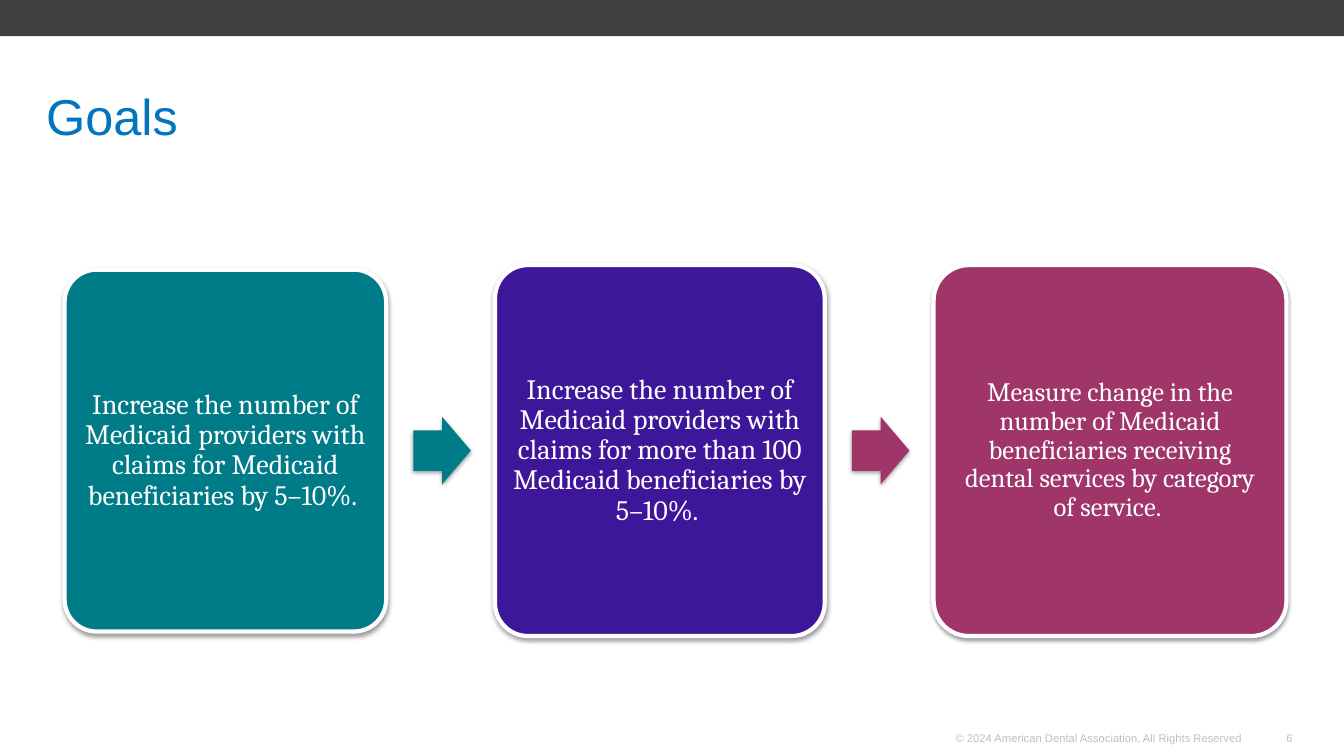
from dataclasses import dataclass

from lxml import etree
from pptx import Presentation
from pptx.dml.color import RGBColor
from pptx.enum.shapes import MSO_SHAPE
from pptx.enum.text import MSO_ANCHOR, PP_ALIGN
from pptx.oxml import parse_xml
from pptx.util import Inches, Pt

RECT, ROUND, ARROW = MSO_SHAPE.RECTANGLE, MSO_SHAPE.ROUNDED_RECTANGLE, MSO_SHAPE.RIGHT_ARROW
LEFT, CENTER, RIGHT = PP_ALIGN.LEFT, PP_ALIGN.CENTER, PP_ALIGN.RIGHT
TOP, MIDDLE = MSO_ANCHOR.TOP, MSO_ANCHOR.MIDDLE


@dataclass(frozen=True)
class Theme:
    bar: str = "404040"
    title: str = "0076BE"
    foot: str = "BFBFBF"
    white: str = "FFFFFF"
    teal: str = "007C89"
    violet: str = "3D1699"
    plum: str = "9F3569"
    sans: str = "Arial"
    serif: str = "Cambria"
    title_size: int = 36
    foot_size: int = 8
    goal_size: int = 20
    small_size: int = 19


T = Theme()
WIDE, HIGH = 13.33, 7.5

TITLE = "Goals"
# text, fill, type size, card width, card height
GOALS = [
    ("Increase the number of Medicaid providers with claims for Medicaid "
     "beneficiaries by 5–10%. ", T.teal, T.goal_size, 3.19, 3.59),
    ("Increase the number of Medicaid providers with claims for more than 100 "
     "Medicaid beneficiaries by 5–10%. ", T.violet, T.goal_size, 3.27, 3.68),
    ("Measure change in the number of Medicaid beneficiaries receiving dental "
     "services by category of service. ", T.plum, T.small_size, 3.5, 3.68),
]
ARROWS = [T.teal, T.plum]
# text, left, width
FOOTER = [
    ("© 2024 American Dental Association, All Rights Reserved", 8.09, 4.33),
    ("6", 12.25, 0.67),
]

START, GAP, MID = 0.64, 1.08, 4.47
ARROW_GAP, ARROW_W, ARROW_H = 0.27, 0.57, 0.67

SHADOW = (
    '<a:effectLst xmlns:a="http://schemas.openxmlformats.org/drawingml/2006/main">'
    '<a:outerShdw blurRad="40000" dist="20000" dir="5400000" rotWithShape="0">'
    '<a:srgbClr val="000000"><a:alpha val="38000"/></a:srgbClr>'
    '</a:outerShdw></a:effectLst>'
)

deck = Presentation()
deck.slide_width, deck.slide_height = Inches(WIDE), Inches(HIGH)
slide = deck.slides.add_slide(deck.slide_layouts[6])


def write(shape, text, size, color, font=T.sans, align=LEFT, anchor=TOP,
          pad=(0.1, 0.05), lead=None):
    frame = shape.text_frame
    frame.word_wrap = True
    frame.vertical_anchor = anchor
    frame.margin_left = frame.margin_right = Inches(pad[0])
    frame.margin_top = frame.margin_bottom = Inches(pad[1])
    para = frame.paragraphs[0]
    para.alignment = align
    para.line_spacing = lead
    run = para.add_run()
    run.text = text
    run.font.name, run.font.size = font, Pt(size)
    run.font.color.rgb = RGBColor.from_string(color)


def box(left, top, width, height):
    return slide.shapes.add_textbox(*map(Inches, (left, top, width, height)))


def draw(kind, left, top, width, height, fill, adjust=(), edge=None, shade=True):
    shape = slide.shapes.add_shape(kind, *map(Inches, (left, top, width, height)))
    for i, value in enumerate(adjust):
        shape.adjustments[i] = value
    shape.fill.solid()
    shape.fill.fore_color.rgb = RGBColor.from_string(fill)
    if edge:
        shape.line.color.rgb = RGBColor.from_string(edge)
        shape.line.width = Pt(3)
    else:
        shape.line.fill.background()
    shape.shadow.inherit = False
    if shade:
        props = shape.element.spPr
        etree.strip_elements(props, "{*}effectLst")
        props.append(parse_xml(SHADOW))
    return shape


draw(RECT, 0, 0, WIDE, 0.36, T.bar, shade=False)
for text, left, width in FOOTER:
    write(box(left, 7.21, width, 0.24), text, T.foot_size, T.foot, align=RIGHT)
write(box(0.36, 0.79, 12.42, 0.7), TITLE, T.title_size, T.title, anchor=MIDDLE)

left = START
for i, (text, fill, size, width, height) in enumerate(GOALS):
    card = draw(ROUND, left, MID - height / 2, width, height, fill,
                adjust=(0.1,), edge=T.white)
    write(card, text, size, T.white, font=T.serif, align=CENTER,
          anchor=MIDDLE, pad=(0.08, 0.08), lead=0.9)
    left += width
    if i < len(ARROWS):
        draw(ARROW, left + ARROW_GAP, MID - ARROW_H / 2, ARROW_W, ARROW_H,
             ARROWS[i], adjust=(0.6, 0.5))
    left += GAP

deck.save("out.pptx")
